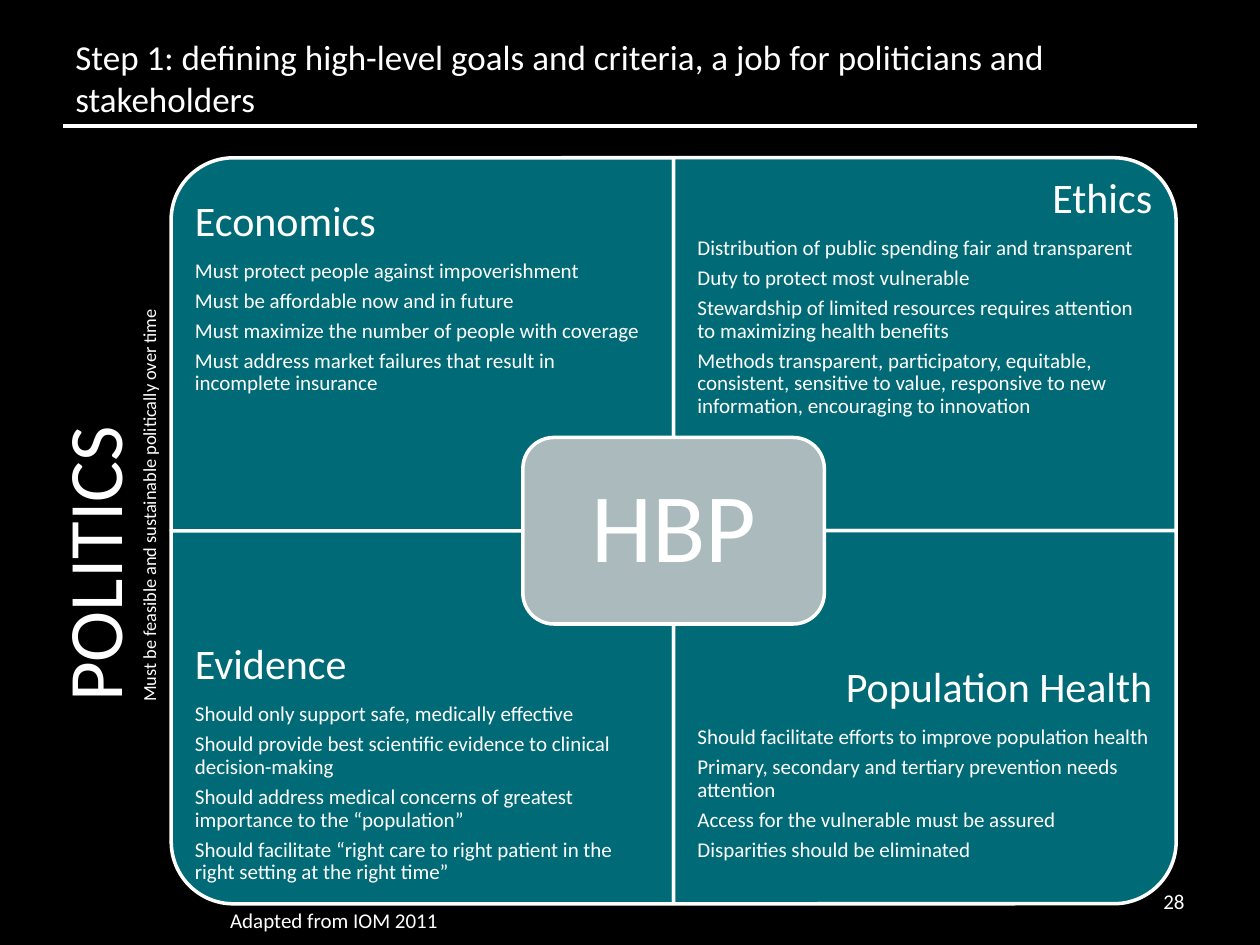
from dataclasses import dataclass

from lxml import etree
from pptx import Presentation
from pptx import util as u
from pptx.dml.color import RGBColor
from pptx.enum import shapes, text
from pptx.oxml.ns import qn

Cm = u.Cm
LEFT, RIGHT, MID = text.PP_ALIGN.LEFT, text.PP_ALIGN.RIGHT, text.PP_ALIGN.CENTER


@dataclass(frozen=True)
class Theme:
    font: str = "Calibri"
    back: str = "000000"
    ink: str = "FFFFFF"
    teal: str = "006B77"
    gray: str = "ABBABD"
    title: float = 20
    head: float = 24
    body: float = 12
    hub: float = 56
    side: float = 44
    note: float = 10.5
    edge: float = 2
    rule: float = 2.25


T = Theme()

# Grid of four panels around a hub, in centimetres
X, Y, W, H = 3.45, 3.18, 10.13, 7.52
HUB_W, HUB_H = 0.6 * W, 0.5 * H

# Column, row, turn of the rounded corner, heading, points
PANELS = [
    (0, 0, 270, "Economics", [
        "Must protect people against impoverishment",
        "Must be affordable now and in future",
        "Must maximize the number of people with coverage",
        "Must address market failures that result in incomplete insurance"]),
    (1, 0, 0, "Ethics", [
        "Distribution of public spending fair and transparent",
        "Duty to protect most vulnerable",
        "Stewardship of limited resources requires attention to maximizing "
        "health benefits",
        "Methods transparent, participatory, equitable, consistent, sensitive "
        "to value, responsive to new information, encouraging to innovation"]),
    (0, 1, 180, "Evidence", [
        "Should only support safe, medically effective",
        "Should provide best scientific evidence to clinical decision-making",
        "Should address medical concerns of greatest importance to the "
        "“population”",
        "Should facilitate “right care to right patient in the right setting "
        "at the right time”"]),
    (1, 1, 90, "Population Health", [
        "Should facilitate efforts to improve population health",
        "Primary, secondary and tertiary prevention needs attention",
        "Access for the vulnerable must be assured",
        "Disparities should be eliminated"]),
]


def color(code):
    return RGBColor.from_string(code)


def write(slide, box, lines, anchor=text.MSO_ANCHOR.MIDDLE, inset=None,
          turn=0, tight=False):
    """Add a text box; each line is (words, size, alignment)."""
    item = slide.shapes.add_textbox(*map(Cm, box))
    item.rotation = turn
    frame = item.text_frame
    frame.word_wrap = True
    frame.vertical_anchor = anchor
    if inset is not None:
        frame.margin_left = frame.margin_right = Cm(inset)
        frame.margin_top = frame.margin_bottom = Cm(inset)
    for i, (words, size, align) in enumerate(lines):
        para = frame.add_paragraph() if i else frame.paragraphs[0]
        para.alignment = align
        if tight:
            para.line_spacing = 0.9
            para.space_after = u.Pt(0.35 * size)
        run = para.add_run()
        run.text = words
        run.font.name = T.font
        run.font.size = u.Pt(size)
        run.font.color.rgb = color(T.ink)


def block(slide, kind, box, fill, turn=0):
    item = slide.shapes.add_shape(kind, *map(Cm, box))
    item.rotation = turn
    item.shadow.inherit = False
    item.fill.solid()
    item.fill.fore_color.rgb = color(fill)
    item.line.color.rgb = color(T.ink)
    item.line.width = u.Pt(T.edge)


def rule(slide, x, y, end):
    line = slide.shapes.add_connector(
        shapes.MSO_CONNECTOR.STRAIGHT, Cm(x), Cm(y), Cm(end), Cm(y))
    line.line.color.rgb = color(T.ink)
    line.line.width = u.Pt(T.rule)
    etree.SubElement(line._element.spPr, qn("a:effectLst"))


def panel(slide, col, row, turn, head, points):
    x, y = X + col * W, Y + row * H
    # A quarter turn swaps the sides about the same centre
    w, h = (H, W) if turn % 180 else (W, H)
    block(slide, shapes.MSO_SHAPE.ROUND_1_RECTANGLE,
          (x + (W - w) / 2, y + (H - h) / 2, w, h), T.teal, turn)
    lines = [(head, T.head, RIGHT if col else LEFT)]
    lines += [(point, T.body, LEFT) for point in points]
    write(slide, (x, y + row * H / 4, W, 0.75 * H), lines,
          inset=0.48, tight=True)


def hub(slide, words):
    x, y = X + W - HUB_W / 2, Y + H - HUB_H / 2
    block(slide, shapes.MSO_SHAPE.ROUNDED_RECTANGLE,
          (x, y, HUB_W, HUB_H), T.gray)
    pad = 0.18
    write(slide, (x + pad, y + pad, HUB_W - 2 * pad, HUB_H - 2 * pad),
          [(words, T.hub, MID)], inset=0.58, tight=True)


def main():
    deck = Presentation()
    deck.slide_width, deck.slide_height = Cm(25.4), Cm(19.05)
    slide = deck.slides.add_slide(deck.slide_layouts[6])
    slide.background.fill.solid()
    slide.background.fill.fore_color.rgb = color(T.back)

    rule(slide, 1.27, 2.54, 24.13)
    write(slide, (4.39, 18.03, 18.03, 1.02),
          [("Adapted from IOM 2011", T.body, LEFT)])
    write(slide, (1.27, 0.76, 22.86, 1.78),
          [("Step 1: defining high-level goals and criteria, a job for "
            "politicians and stakeholders", T.title, LEFT)],
          anchor=text.MSO_ANCHOR.BOTTOM)
    write(slide, (22.68, 17.65, 1.45, 1.02), [("28", T.body, RIGHT)])
    for item in PANELS:
        panel(slide, *item)
    hub(slide, "HBP")
    write(slide, (-2.36, 8.23, 9.32, 3.02),
          [("POLITICS", T.side, LEFT),
           ("Must be feasible and sustainable politically over time",
            T.note, LEFT)],
          anchor=text.MSO_ANCHOR.TOP, turn=270)
    deck.save("out.pptx")


if __name__ == "__main__":
    main()
